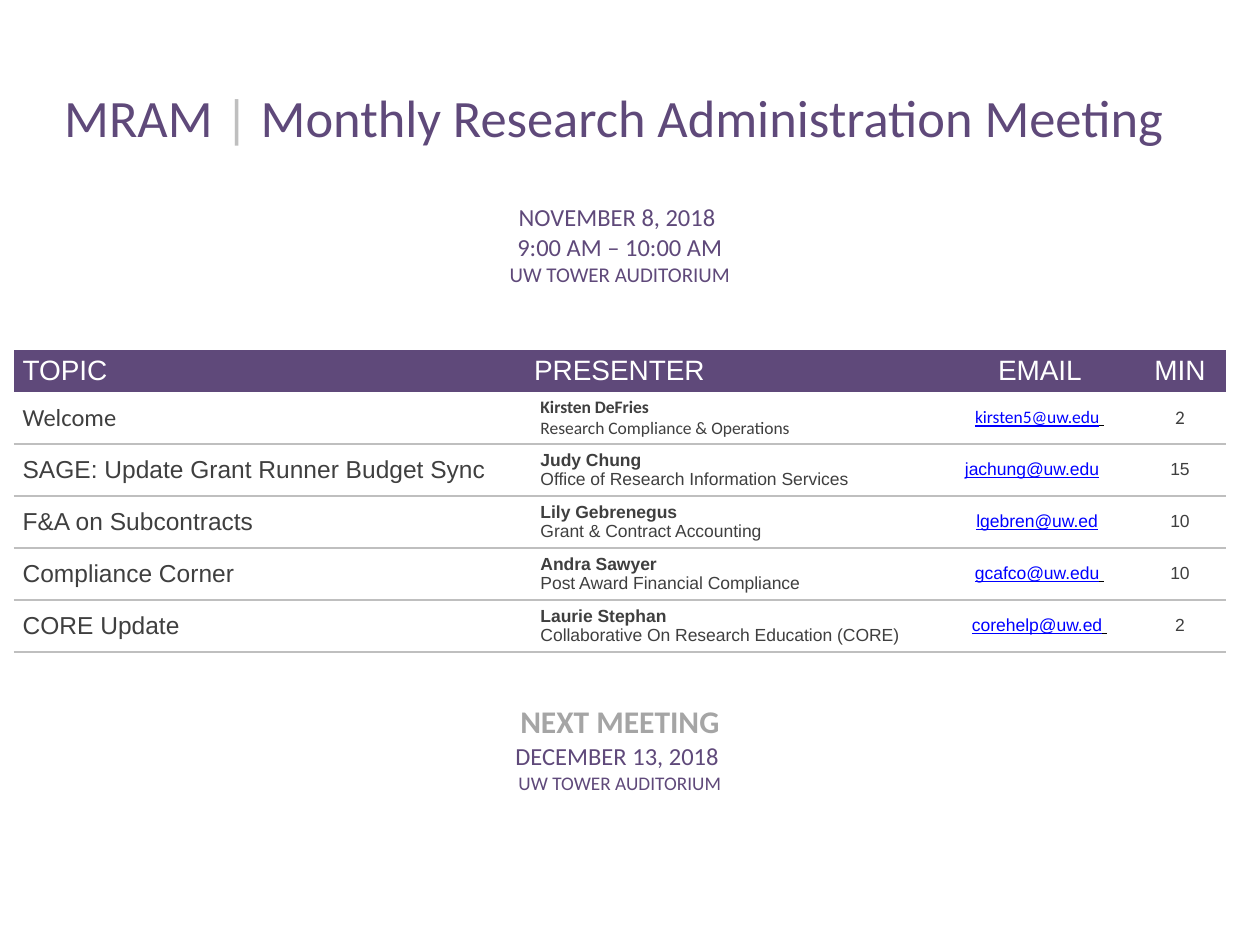
from lxml import etree
from pptx import Presentation
from pptx.dml.color import RGBColor
from pptx.enum.text import MSO_ANCHOR, PP_ALIGN
from pptx.oxml.ns import qn
from pptx.util import Inches, Pt

LEFT, CENTER = PP_ALIGN.LEFT, PP_ALIGN.CENTER
MIDDLE, BOTTOM = MSO_ANCHOR.MIDDLE, MSO_ANCHOR.BOTTOM

PURPLE, WHITE, INK = "5F497A", "FFFFFF", "3F3F3F"
RULE, GRAY, LINK, BLACK = "BFBFBF", "A5A5A5", "0000FF", "000000"
NO_STYLE = "{2D5ABB26-0587-4C30-8999-92F81FD0307C}"

COLUMNS = [4.06, 3.33, 1.5, 0.73]
TITLE_H, DATE_H, HEADER_H, TOPIC_H, NEXT_H = 0.62, 1.58, 0.33, 0.413, 1.14

# topic, presenter, office, email, trailing space, minutes
TOPICS = [
    ("Welcome", "Kirsten DeFries", "Research Compliance & Operations",
     "kirsten5@uw.edu", "underlined", "2"),
    ("SAGE: Update Grant Runner Budget Sync", "Judy Chung",
     "Office of Research Information Services", "jachung@uw.edu", None, "15"),
    ("F&A on Subcontracts", "Lily Gebrenegus", "Grant & Contract Accounting",
     "lgebren@uw.ed", "plain", "10"),
    ("Compliance Corner", "Andra Sawyer", "Post Award Financial Compliance",
     "gcafco@uw.edu", "underlined", "10"),
    ("CORE Update", "Laurie Stephan",
     "Collaborative On Research Education (CORE)",
     "corehelp@uw.ed", "underlined", "2"),
]


def rgb(color):
    return RGBColor.from_string(color)


def set_font(font, size, color, name, bold=False):
    font.size, font.name, font.bold = Pt(size), name, bold
    font.color.rgb = rgb(color)


def format_cell(cell, fill=WHITE, anchor=MIDDLE, left=0.07, right=0.07, bottom=0):
    cell.fill.solid()
    cell.fill.fore_color.rgb = rgb(fill)
    cell.vertical_anchor = anchor
    cell.margin_left, cell.margin_right = Inches(left), Inches(right)
    cell.margin_top, cell.margin_bottom = 0, Inches(bottom)


def write_lines(cell, lines, align=LEFT):
    """Each line is (text, size, color, font name, bold)."""
    tf = cell.text_frame
    for i, (text, *style) in enumerate(lines):
        p = tf.add_paragraph() if i else tf.paragraphs[0]
        p.alignment = align
        set_font(p.font, *style)
        p.add_run().text = text


def rule_below(cell):
    tcPr = cell._tc.get_or_add_tcPr()
    ln = etree.Element(qn("a:lnB"), w=str(Pt(1)))
    fill = etree.SubElement(ln, qn("a:solidFill"))
    etree.SubElement(fill, qn("a:srgbClr"), val=RULE)
    tcPr.insert(0, ln)


def merge_row(table, row):
    cell = table.cell(row, 0)
    cell.merge(table.cell(row, len(COLUMNS) - 1))
    return cell


def fill_title(cell):
    format_cell(cell, anchor=BOTTOM)
    p = cell.text_frame.paragraphs[0]
    p.alignment = CENTER
    for text, color in [("MRAM ", PURPLE), ("|", RULE),
                        (" Monthly Research Administration Meeting ", PURPLE)]:
        r = p.add_run()
        r.text = text
        set_font(r.font, 30, color, "Calibri")


def fill_date(cell):
    format_cell(cell, anchor=BOTTOM, bottom=0.49)
    write_lines(cell, [
        ("NOVEMBER 8, 2018 ", 14, PURPLE, "Calibri", False),
        ("9:00 AM – 10:00 AM", 14, PURPLE, "Calibri", False),
        ("UW TOWER AUDITORIUM", 12, PURPLE, "Calibri", False),
    ], CENTER)


def fill_header(cells):
    heads = [("TOPIC", LEFT), ("PRESENTER", LEFT),
             (" EMAIL ", CENTER), ("MIN", CENTER)]
    for cell, (text, align) in zip(cells, heads):
        format_cell(cell, PURPLE)
        write_lines(cell, [(text, 16, WHITE, "Arial", False)], align)


def fill_email(cell, address, space, name):
    format_cell(cell, left=0, right=0.12)
    p = cell.text_frame.paragraphs[0]
    p.alignment = CENTER
    r = p.add_run()
    r.text = address
    set_font(r.font, 10, LINK, name)
    r.font.underline = True
    if space:
        p._p.get_or_add_pPr().set("marL", str(Inches(0.12)))
        r = p.add_run()
        r.text = " "
        set_font(r.font, 10, BLACK, "Arial")
        r.font.underline = space == "underlined"


def fill_topic(cells, entry, name="Arial", minutes_size=10):
    topic, presenter, office, email, space, minutes = entry
    topic_cell, presenter_cell, email_cell, minutes_cell = cells
    format_cell(topic_cell)
    write_lines(topic_cell, [(topic, 14, INK, name, False)])
    format_cell(presenter_cell, left=0.12, right=0.12)
    write_lines(presenter_cell, [(presenter, 10, INK, name, True),
                                 (office, 10, INK, name, False)])
    fill_email(email_cell, email, space, name)
    format_cell(minutes_cell)
    write_lines(minutes_cell, [(minutes, minutes_size, INK, name, False)], CENTER)
    for cell in cells:
        rule_below(cell)


def fill_next_meeting(cell):
    format_cell(cell, anchor=BOTTOM)
    write_lines(cell, [
        ("NEXT MEETING", 18, GRAY, "Calibri", True),
        ("DECEMBER 13, 2018 ", 14, PURPLE, "Calibri", False),
        ("UW TOWER AUDITORIUM", 11, PURPLE, "Calibri", False),
    ], CENTER)


def add_agenda(s, left, top):
    heights = [TITLE_H, DATE_H, HEADER_H] + [TOPIC_H] * len(TOPICS) + [NEXT_H]
    table = s.shapes.add_table(
        len(heights), len(COLUMNS), Inches(left), Inches(top),
        Inches(sum(COLUMNS)), Inches(sum(heights))).table
    table.first_row = table.horz_banding = False
    table._tbl.tblPr.find(qn("a:tableStyleId")).text = NO_STYLE
    for column, width in zip(table.columns, COLUMNS):
        column.width = Inches(width)
    for row, height in zip(table.rows, heights):
        row.height = Inches(height)

    fill_title(merge_row(table, 0))
    fill_date(merge_row(table, 1))
    fill_header(table.rows[2].cells)
    for i, entry in enumerate(TOPICS):
        style = {} if i else {"name": "Calibri", "minutes_size": 11}
        fill_topic(list(table.rows[3 + i].cells), entry, **style)
    fill_next_meeting(merge_row(table, len(heights) - 1))


def main():
    prs = Presentation()
    prs.slide_width, prs.slide_height = Inches(10), Inches(7.5)
    s = prs.slides.add_slide(prs.slide_layouts[6])
    add_agenda(s, 0.11, 0.58)
    prs.save("out.pptx")


if __name__ == "__main__":
    main()
